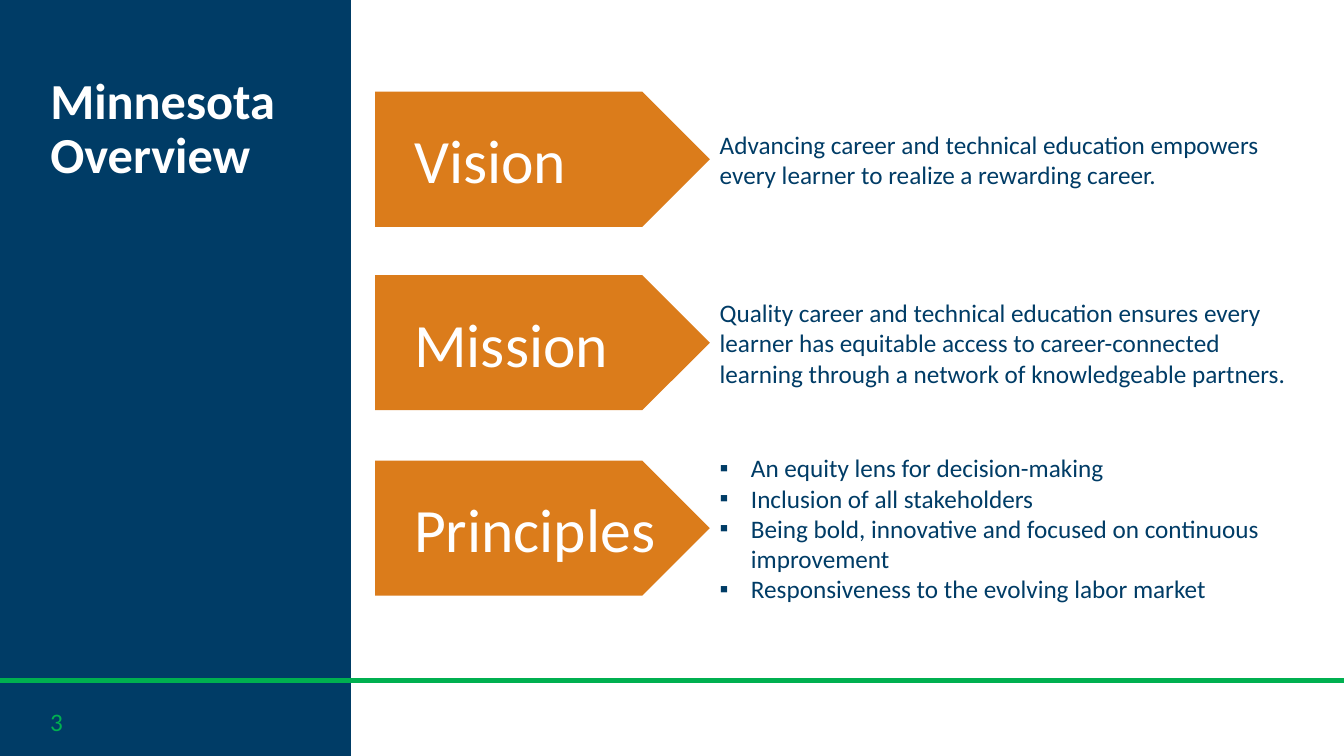
from pptx import Presentation
from pptx import util as u
from pptx.dml.color import RGBColor
from pptx.enum import shapes, text
from pptx.oxml.ns import qn
from lxml import etree

TITLE = "Minnesota Overview"
PAGE = "3"
ROWS = [
    ("Vision", 1.58, 0.71, False, [
        "Advancing career and technical education empowers every learner "
        "to realize a rewarding career."]),
    ("Mission", 3.4, 1.01, False, [
        "Quality career and technical education ensures every learner has "
        "equitable access to career-connected learning through a network "
        "of knowledgeable partners."]),
    ("Principles", 5.24, 1.62, True, [
        "An equity lens for decision-making",
        "Inclusion of all stakeholders",
        "Being bold, innovative and focused on continuous improvement",
        "Responsiveness to the evolving labor market"]),
]
THEME = {
    "font": "Calibri", "navy": "003C66", "green": "00B050",
    "orange": "DB7C1B", "white": "FFFFFF",
    "title": 36, "label": 44, "body": 18,
}
WIDE, HIGH = 13.33, 7.5
SIDE = 3.48
RULE = 6.75
TAG_X, TAG_W, TAG_H = 3.72, 3.32, 1.34
LABEL_X, LABEL_W, LABEL_H = 4.01, 2.67, 0.84
BODY_X, BODY_W = TAG_X + TAG_W, 5.87
INDENT = 0.31


def color(name):
    return RGBColor.from_string(THEME[name])


def place(x, y, w, h):
    return [u.Inches(n) for n in (x, y, w, h)]


def add_block(slide, kind, box, fill):
    block = slide.shapes.add_shape(kind, *place(*box))
    block.shadow.inherit = False
    block.fill.solid()
    block.fill.fore_color.rgb = color(fill)
    block.line.fill.background()


def add_bullet(para):
    props = para._p.get_or_add_pPr()
    props.set("marL", str(u.Inches(INDENT)))
    props.set("indent", str(-u.Inches(INDENT)))
    etree.SubElement(props, qn("a:buFont")).set("typeface", "Arial")
    etree.SubElement(props, qn("a:buChar")).set("char", "▪")


def add_text(slide, box, lines, size, tint, bold=False, bullet=False,
             anchor=text.MSO_ANCHOR.MIDDLE, gap=None):
    frame = slide.shapes.add_textbox(*place(*box)).text_frame
    frame.word_wrap = True
    frame.vertical_anchor = anchor
    for i, line in enumerate(lines):
        para = frame.add_paragraph() if i else frame.paragraphs[0]
        if gap:
            para.line_spacing = gap
        if bullet:
            add_bullet(para)
        run = para.add_run()
        run.text = line
        run.font.name = THEME["font"]
        run.font.size = u.Pt(THEME[size])
        run.font.bold = bold
        run.font.color.rgb = color(tint)


def add_rule(slide):
    rule = slide.shapes.add_connector(
        shapes.MSO_CONNECTOR.STRAIGHT, *place(0, RULE, WIDE, RULE))
    rule.line.color.rgb = color("green")
    rule.line.width = u.Pt(3)
    etree.SubElement(rule._element.spPr, qn("a:effectLst"))


def add_row(slide, label, mid, high, bullet, lines):
    add_block(slide, shapes.MSO_SHAPE.PENTAGON,
              (TAG_X, mid - TAG_H / 2, TAG_W, TAG_H), "orange")
    add_text(slide, (LABEL_X, mid - LABEL_H / 2, LABEL_W, LABEL_H),
             [label], "label", "white")
    add_text(slide, (BODY_X, mid - high / 2, BODY_W, high),
             lines, "body", "navy", bullet=bullet)


def main():
    deck = Presentation()
    deck.slide_width, deck.slide_height = u.Inches(WIDE), u.Inches(HIGH)
    slide = deck.slides.add_slide(deck.slide_layouts[6])
    add_block(slide, shapes.MSO_SHAPE.RECTANGLE, (0, 0, SIDE, HIGH), "navy")
    add_rule(slide)
    add_text(slide, (0.4, 6.96, 2.17, 0.4), [PAGE], "body", "green")
    for row in ROWS:
        add_row(slide, *row)
    add_text(slide, (0.4, 0.7, 3.09, 2), [TITLE], "title", "white",
             bold=True, anchor=text.MSO_ANCHOR.TOP, gap=0.9)
    deck.save("out.pptx")


if __name__ == "__main__":
    main()
